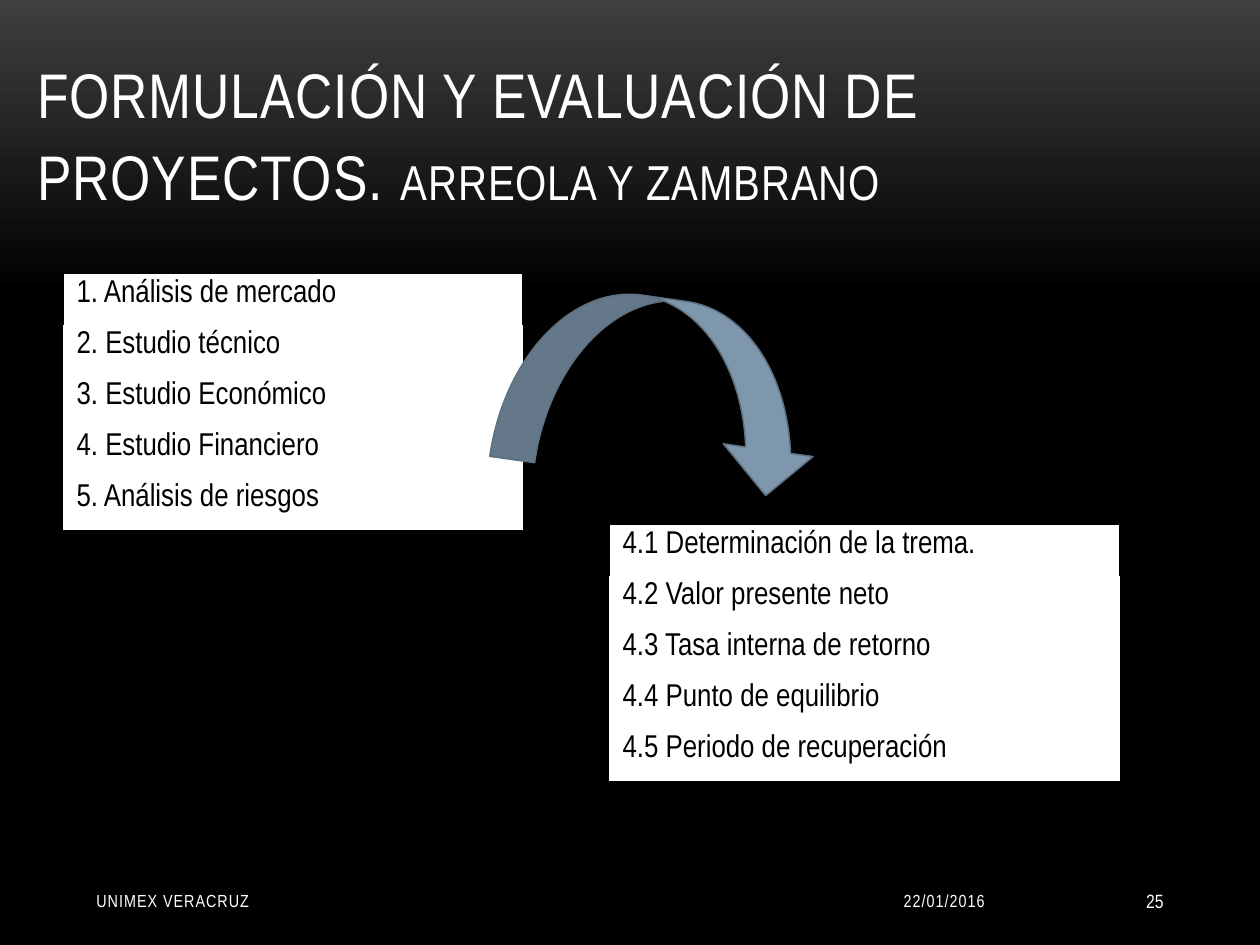
from dataclasses import dataclass

from lxml.etree import SubElement
from pptx import Presentation
from pptx.dml.color import RGBColor as RGB
from pptx.enum.shapes import MSO_SHAPE as SHAPE
from pptx.enum.text import MSO_ANCHOR as ANCHOR, PP_ALIGN as ALIGN
from pptx.oxml.ns import qn
from pptx.util import Pt


@dataclass(frozen=True)
class Theme:
    font: str = "Arial Narrow"
    black: str = "000000"
    white: str = "FFFFFF"
    glow: str = "3F3F3F"
    arrow: str = "7E97AD"
    arrow_line: str = "5D7080"
    cell: int = 18
    footer: int = 10
    number: int = 11


THEME = Theme()
TITLE = [
    ("FORMULACIÓN Y EVALUACIÓN DE PROYECTOS.", 36),
    (" ", 40),
    ("ARREOLA Y ZAMBRANO", 28),
]
TITLE_BOX = (25, 0, 1211, 221)
FOOTERS = [
    ("22/01/2016", THEME.footer, 60, ALIGN.RIGHT, (787, 876, 210, 50)),
    ("UNIMEX VERACRUZ", THEME.footer, 60, ALIGN.LEFT, (84, 876, 400, 50)),
    ("25", THEME.number, 0, ALIGN.RIGHT, (1040, 876, 136, 50)),
]
ROW_HEIGHT = 51
CELL_MARGIN = 6
TABLES = [
    ((64, 274, 458), [
        "1. Análisis de mercado",
        "2. Estudio técnico",
        "3. Estudio Económico",
        "4. Estudio Financiero",
        "5. Análisis de riesgos",
    ]),
    ((610, 525, 509), [
        "4.1 Determinación de la trema.",
        "4.2 Valor presente neto",
        "4.3 Tasa interna de retorno",
        "4.4 Punto de equilibrio",
        "4.5 Periodo de recuperación",
    ]),
]
ARROW_BOX = (501, 299, 324, 181)
ARROW_ROTATION = 8.1


def px(n):
    return round(n * 914400 / 126)


def color(name):
    return RGB.from_string(name)


def style(font, size, name):
    font.name = THEME.font
    font.size = Pt(size)
    font.color.rgb = color(name)


def add_text(slide, box, runs, anchor, align, spacing):
    tf = slide.shapes.add_textbox(*map(px, box)).text_frame
    tf.word_wrap = True
    tf.vertical_anchor = anchor
    p = tf.paragraphs[0]
    p.alignment = align
    for text, size in runs:
        r = p.add_run()
        r.text = text
        style(r.font, size, THEME.white)
        r.font._element.set("spc", str(spacing))


def set_borders(cell, visible):
    tcPr = cell._tc.get_or_add_tcPr()
    for i, side in enumerate(("lnL", "lnR", "lnT", "lnB")):
        ln = SubElement(tcPr, qn(f"a:{side}"), w=str(Pt(1)))
        if visible and side != "lnT":
            fill = SubElement(ln, qn("a:solidFill"))
            SubElement(fill, qn("a:srgbClr"), val=THEME.white)
        else:
            SubElement(ln, qn("a:noFill"))
        tcPr.insert(i, ln)


def add_list_table(slide, place, items):
    left, top, width = place
    box = (left, top, width, ROW_HEIGHT * len(items))
    table = slide.shapes.add_table(len(items), 1, *map(px, box)).table
    table.first_row = table.horz_banding = False
    for i, text in enumerate(items):
        cell = table.cell(i, 0)
        cell.margin_top = cell.margin_bottom = px(CELL_MARGIN)
        cell.vertical_anchor = ANCHOR.TOP
        cell.fill.solid()
        cell.fill.fore_color.rgb = color(THEME.white)
        set_borders(cell, i > 0)
        cell.text = text
        style(cell.text_frame.paragraphs[0].font, THEME.cell, THEME.black)


def set_background(slide):
    fill = slide.background.fill
    fill.gradient()
    fill.gradient_angle = 270
    stops = fill.gradient_stops
    for stop, position, name in zip(stops, (0, 0.31), (THEME.glow, THEME.black)):
        stop.position = position
        stop.color.rgb = color(name)


def add_arrow(slide):
    sp = slide.shapes.add_shape(SHAPE.CURVED_DOWN_ARROW, *map(px, ARROW_BOX))
    sp.rotation = ARROW_ROTATION
    sp.shadow.inherit = False
    sp.fill.solid()
    sp.fill.fore_color.rgb = color(THEME.arrow)
    sp.line.color.rgb = color(THEME.arrow_line)
    sp.line.width = Pt(0.85)


def main():
    prs = Presentation()
    prs.slide_width, prs.slide_height = px(1260), px(945)
    slide = prs.slides.add_slide(prs.slide_layouts[6])
    set_background(slide)
    add_text(slide, TITLE_BOX, TITLE, ANCHOR.BOTTOM, ALIGN.LEFT, 50)
    for text, size, spacing, align, box in FOOTERS:
        add_text(slide, box, [(text, size)], ANCHOR.MIDDLE, align, spacing)
    for place, items in TABLES:
        add_list_table(slide, place, items)
    add_arrow(slide)
    prs.save("out.pptx")


if __name__ == "__main__":
    main()
